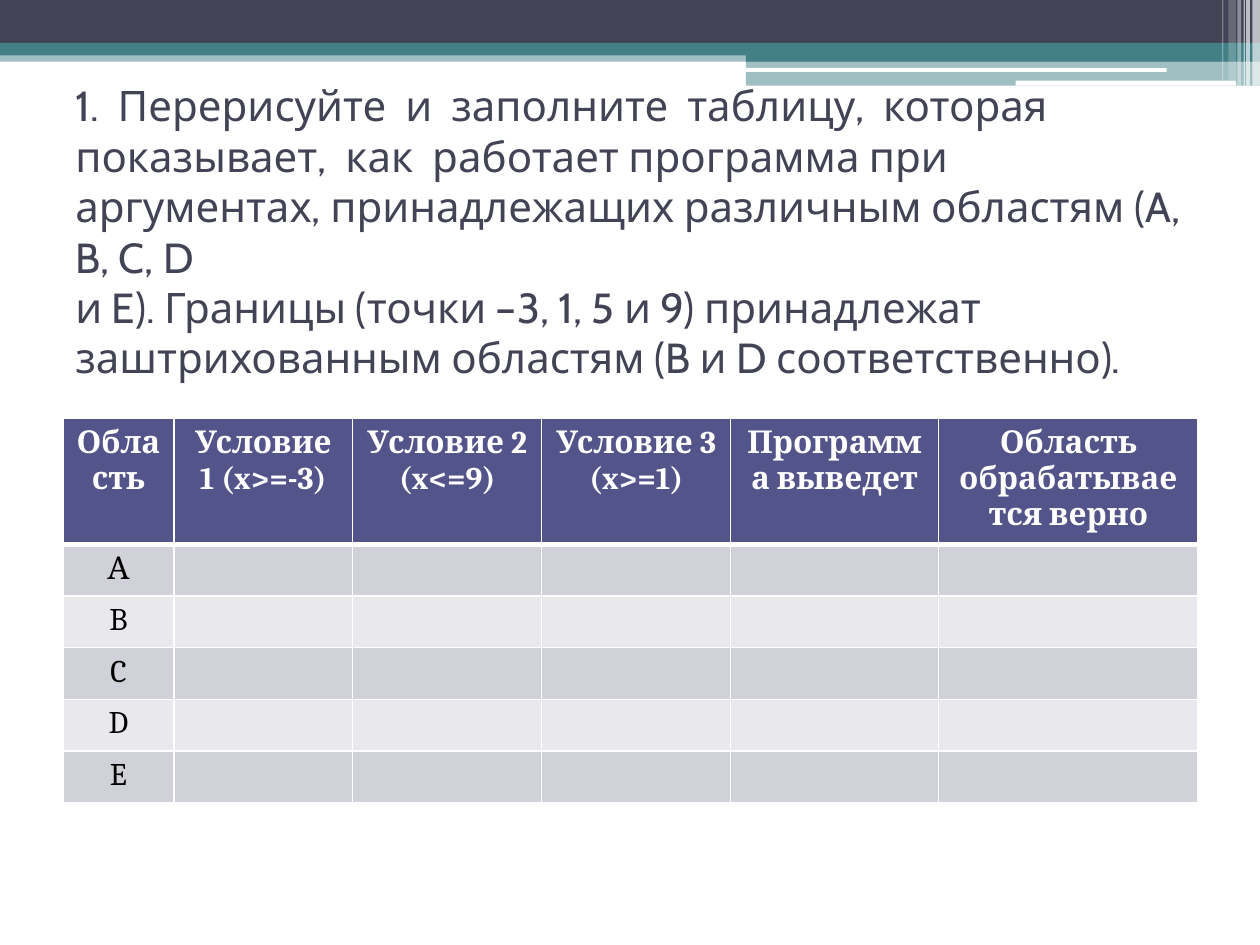
from lxml.etree import SubElement
from pptx import Presentation
from pptx.dml.color import RGBColor
from pptx.enum.shapes import MSO_SHAPE as Shape
from pptx.enum.text import MSO_ANCHOR as Anchor, PP_ALIGN as Align
from pptx.oxml.ns import qn
from pptx.util import Inches, Pt

WHITE, NAVY, TEAL = "FFFFFF", "424456", "438086"
HEADER, BANDS = "53548A", ("D1D1DA", "E9E9ED")

BARS = [
    (0, 0.4, 10, 0.09, TEAL, 50),
    (0, 0, 10, 0.34, NAVY, 100),
    (0, 0.34, 10, 0.1, TEAL, 100),
    (5.92, 0.39, 4.08, 0.1, TEAL, 100),
    (5.92, 0.48, 4.08, 0.2, TEAL, 50),
]
ROUNDED_BARS = [(5.91, 0.54, 3.35, 0.03), (8.06, 0.64, 1.75, 0.04)]
STRIPES = [
    (9.94, 0.06, 0.68, 65),
    (9.89, 0.03, 0.68, 65),
    (9.87, 0.01, 0.68, 60),
    (9.82, 0.03, 0.68, 40),
    (9.75, 0.06, 0.64, 20),
    (9.7, 0.01, 0.64, 30),
]
TITLE = [
    "1.  Перерисуйте  и  заполните  таблицу,  которая  показывает,  как  работает "
    "программа при аргументах, принадлежащих различным областям (A, B, C, D ",
    "и E). Границы (точки –3, 1, 5 и 9) принадлежат заштрихованным областям "
    "(B и D соответственно).",
]
HEADINGS = [
    "Область",
    "Условие 1 (x>=-3)",
    "Условие 2 (x<=9)",
    "Условие 3 (x>=1)",
    "Программа выведет",
    "Область обрабатывается верно",
]
REGIONS = ["А", "B", "C", "D", "E"]
COLUMN_WIDTHS = [0.88, 1.42, 1.5, 1.5, 1.65, 2.06]


def color(value):
    return RGBColor.from_string(value)


class SlideBuilder:
    title_font, table_font = "Cabin", "Cambria"
    title_size, table_size = 24, 18

    def __init__(self, page):
        self.page = page

    def bar(self, left, top, width, height, fill, opacity=100, kind=Shape.RECTANGLE):
        bar = self.page.shapes.add_shape(
            kind, Inches(left), Inches(top), Inches(width), Inches(height)
        )
        bar.shadow.inherit = False
        bar.fill.solid()
        bar.fill.fore_color.rgb = color(fill)
        bar.line.fill.background()
        if opacity < 100:
            tint = bar.fill._xPr.find(qn("a:solidFill"))[0]
            SubElement(tint, qn("a:alpha"), val=str(opacity * 1000))

    def span(self, para, text, font, size, ink, bold=False):
        span = para.add_run()
        span.text = text
        span.font.name = font
        span.font.size = Pt(size)
        span.font.bold = bold
        span.font.color.rgb = color(ink)

    def title(self, lines, left, top, width, height):
        box = self.page.shapes.add_textbox(
            Inches(left), Inches(top), Inches(width), Inches(height)
        )
        frame = box.text_frame
        frame.word_wrap = True
        frame.vertical_anchor = Anchor.MIDDLE
        para = frame.paragraphs[0]
        for number, line in enumerate(lines):
            if number:
                para.add_line_break()
            self.span(para, line, self.title_font, self.title_size, NAVY)

    def borders(self, cell, top, bottom):
        properties = cell._tc.get_or_add_tcPr()
        widths = {"a:lnL": 1, "a:lnR": 1, "a:lnT": top, "a:lnB": bottom}
        for position, (side, width) in enumerate(widths.items()):
            edge = SubElement(properties, qn(side), w=str(Pt(width)))
            properties.insert(position, edge)
            fill = SubElement(edge, qn("a:solidFill"))
            SubElement(fill, qn("a:srgbClr"), val=WHITE)

    def table(self, rows, widths, left, top, height, row_height):
        holder = self.page.shapes.add_table(
            len(rows), len(widths), Inches(left), Inches(top),
            Inches(sum(widths)), Inches(height),
        )
        table = holder.table
        for column, width in zip(table.columns, widths):
            column.width = Inches(width)
        for number, texts in enumerate(rows):
            table.rows[number].height = Inches(row_height)
            is_header = number == 0
            fill = HEADER if is_header else BANDS[(number - 1) % 2]
            ink = WHITE if is_header else "000000"
            for index, text in enumerate(texts):
                cell = table.cell(number, index)
                cell.fill.solid()
                cell.fill.fore_color.rgb = color(fill)
                self.borders(cell, 3 if number == 1 else 1, 3 if is_header else 1)
                para = cell.text_frame.paragraphs[0]
                para.alignment = Align.CENTER
                if text:
                    self.span(para, text, self.table_font, self.table_size, ink, is_header)
        holder.height = Inches(height)


def main():
    deck = Presentation()
    deck.slide_width, deck.slide_height = Inches(10), Inches(7.5)
    builder = SlideBuilder(deck.slides.add_slide(deck.slide_layouts[6]))
    for bar in BARS:
        builder.bar(*bar)
    for place in ROUNDED_BARS:
        builder.bar(*place, WHITE, kind=Shape.ROUNDED_RECTANGLE)
    for left, width, height, opacity in STRIPES:
        builder.bar(left, 0, width, height, WHITE, opacity)
    builder.title(TITLE, 0.5, 1.25, 9, 1.17)
    blanks = [""] * (len(HEADINGS) - 1)
    rows = [HEADINGS] + [[region] + blanks for region in REGIONS]
    builder.table(rows, COLUMN_WIDTHS, 0.5, 3.32, 3.03, 0.41)
    deck.save("out.pptx")


if __name__ == "__main__":
    main()
